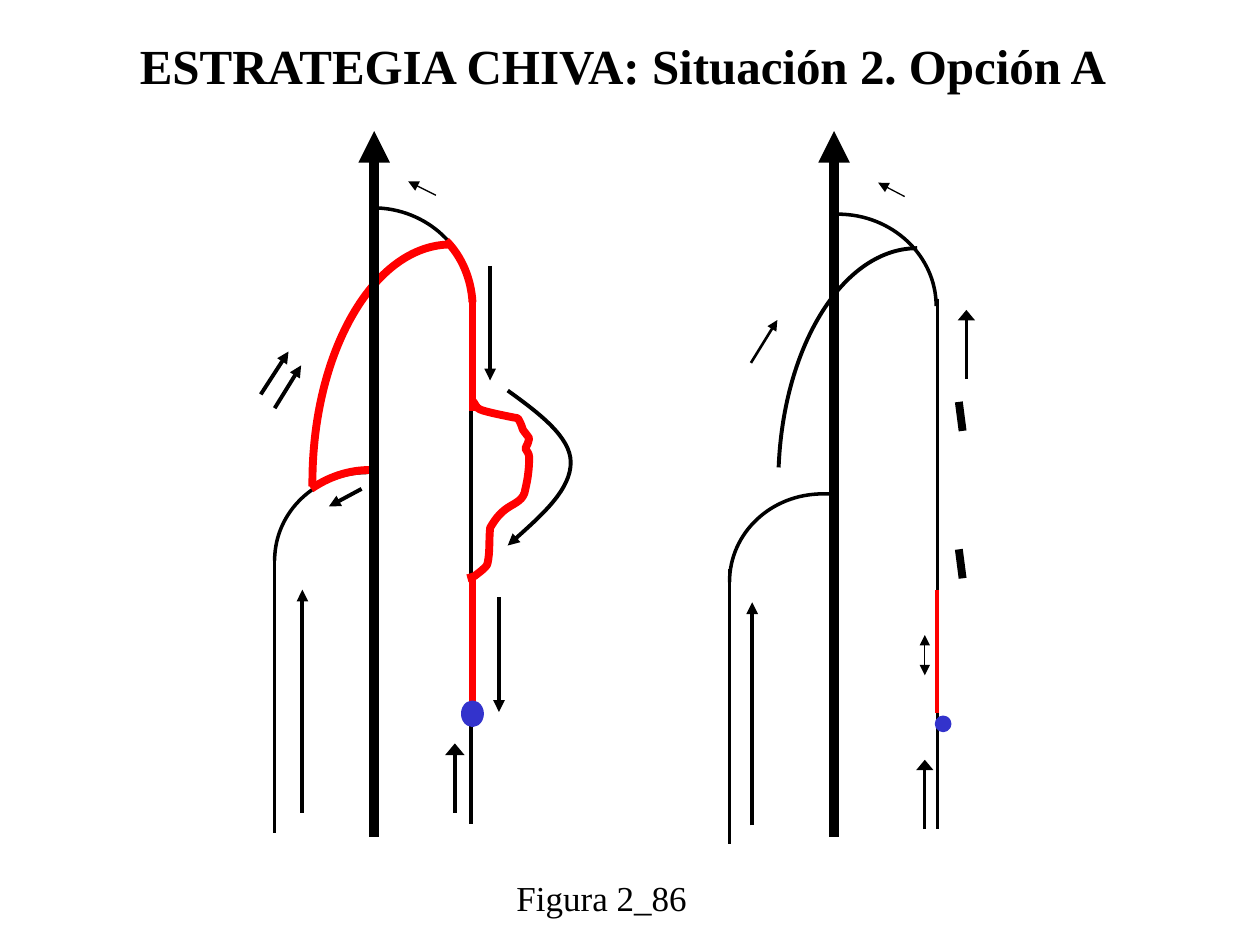
from lxml import etree
from pptx import Presentation
from pptx.dml.color import RGBColor
from pptx.enum.shapes import MSO_CONNECTOR, MSO_SHAPE
from pptx.enum.text import MSO_ANCHOR, PP_ALIGN
from pptx.oxml.ns import qn
from pptx.util import Inches, Pt

COLORS = {"ink": "000000", "reflux": "FF0000", "reentry": "3333CC"}
FONT = "Times New Roman"


def color(name):
    return RGBColor.from_string(COLORS[name])


def format_line(part, name, width, ends=(), head_width="med"):
    part.line.color.rgb = color(name)
    part.line.width = Pt(width)
    for end in ends:
        arrowhead = etree.SubElement(part.line._get_or_add_ln(), qn(f"a:{end}"))
        arrowhead.set("type", "triangle")
        arrowhead.set("w", head_width)


def vessel(slide, box, start, end, width=2, name="ink", ends=(), head_width="med"):
    left, top = box
    points = [Inches(value) for x, y in (start, end) for value in (left + x, top + y)]
    segment = slide.shapes.add_connector(MSO_CONNECTOR.STRAIGHT, *points)
    format_line(segment, name, width, ends, head_width)
    etree.SubElement(segment._element.spPr, qn("a:effectLst"))


def arrow(slide, box, start, end, width=2.25, head_width="med"):
    vessel(slide, box, start, end, width, ends=("tailEnd",), head_width=head_width)


def curve(slide, box, points, width=2, name="ink", ends=()):
    left, top = box
    start, *controls = [(Inches(left + x), Inches(top + y)) for x, y in points]
    builder = slide.shapes.build_freeform(*start)
    builder.add_line_segments(controls, close=False)
    bend = builder.convert_to_shape()
    bend.shadow.inherit = False
    bend.fill.background()
    format_line(bend, name, width, ends)
    outline = bend._element.xpath(".//a:path")[0]
    segments = outline.findall(qn("a:lnTo"))
    for first in range(0, len(segments), 3):
        bezier = etree.SubElement(outline, qn("a:cubicBezTo"))
        for segment in segments[first:first + 3]:
            bezier.append(segment[0])
            outline.remove(segment)


def reentry_point(slide, box, x, y, width, height):
    left, top = box
    dot = slide.shapes.add_shape(
        MSO_SHAPE.OVAL, Inches(left + x), Inches(top + y), Inches(width), Inches(height))
    dot.shadow.inherit = False
    dot.fill.solid()
    dot.fill.fore_color.rgb = color("reentry")
    format_line(dot, "reentry", 3)


def deep_vein(slide, box):
    arrow(slide, box, (0, 5.6), (0, 0), 6)


def before_treatment(slide, box):
    curve(slide, box, [(-0.79, 3.41), (-0.79, 3.02), (-0.46, 2.71), (-0.05, 2.71)])
    vessel(slide, box, (-0.79, 3.39), (-0.79, 5.57))
    curve(slide, box, [(-0.01, 0.61), (0.42, 0.61), (0.77, 0.94), (0.77, 1.34)])
    vessel(slide, box, (0.77, 1.29), (0.77, 5.5))

    varicose_loop = [
        (0.78, 2.14), (0.8, 2.16), (0.81, 2.2), (0.84, 2.21), (0.88, 2.23), (1.09, 2.27),
        (1.14, 2.28), (1.16, 2.31), (1.17, 2.34), (1.18, 2.37), (1.2, 2.4), (1.22, 2.42),
        (1.23, 2.44), (1.23, 2.47), (1.21, 2.49), (1.2, 2.52), (1.21, 2.54), (1.23, 2.56),
        (1.23, 2.59), (1.23, 2.67), (1.22, 2.76), (1.2, 2.84), (1.19, 2.93), (1.12, 2.95),
        (1.06, 2.99), (1, 3.03), (0.96, 3.08), (0.92, 3.15), (0.91, 3.25), (0.92, 3.34),
        (0.9, 3.43), (0.9, 3.46), (0.81, 3.52), (0.8, 3.53), (0.78, 3.54), (0.74, 3.55),
        (0.74, 3.55),
    ]
    reflux_curves = [
        [(-0.49, 2.82), (-0.49, 2.81), (-0.49, 2.8), (-0.49, 2.79),
         (-0.49, 1.75), (0, 0.9), (0.61, 0.9)],
        [(0.57, 0.87), (0.7, 1), (0.77, 1.18), (0.78, 1.36)],
        [(-0.5, 2.84), (-0.37, 2.75), (-0.21, 2.69), (-0.03, 2.69)],
        varicose_loop,
    ]
    for points in reflux_curves:
        curve(slide, box, points, 4.5, "reflux")
    for top, bottom in [(1.32, 2.22), (3.54, 4.53)]:
        vessel(slide, box, (0.78, top), (0.78, bottom), 4.5, "reflux")

    deep_vein(slide, box)
    reentry_point(slide, box, 0.71, 4.54, 0.14, 0.17)
    flows = [
        ((0.92, 1.07), (0.92, 1.98)), ((0.99, 3.7), (0.99, 4.61)),
        ((-0.57, 5.41), (-0.57, 3.64)), ((-0.9, 2.09), (-0.68, 1.75)),
        ((-0.79, 2.2), (-0.58, 1.86)), ((-0.1, 2.84), (-0.36, 2.98)),
    ]
    for start, end in flows:
        arrow(slide, box, start, end)
    arrow(slide, box, (0.64, 5.41), (0.64, 4.86), head_width="lg")
    arrow(slide, box, (0.49, 0.51), (0.27, 0.4), 0.75)
    curve(slide, box, [(1.06, 2.06), (1.31, 2.24), (1.56, 2.43), (1.56, 2.63),
                       (1.56, 2.84), (1.31, 3.07), (1.06, 3.29)], 2.25, ends=("tailEnd",))


def after_treatment(slide, box):
    curve(slide, box, [(-0.83, 3.58), (-0.83, 3.19), (-0.5, 2.88), (-0.09, 2.88),
                       (-0.07, 2.88), (-0.05, 2.88), (-0.03, 2.88)])
    vessel(slide, box, (-0.83, 3.48), (-0.83, 5.66))
    curve(slide, box, [(0.03, 0.66), (0.46, 0.66), (0.81, 0.99), (0.81, 1.39)])
    vessel(slide, box, (0.82, 1.33), (0.82, 5.54))
    curve(slide, box, [(-0.44, 2.67), (-0.4, 1.69), (0.08, 0.93), (0.66, 0.93)], 2.25)

    deep_vein(slide, box)
    reentry_point(slide, box, 0.82, 4.66, 0.09, 0.09)
    vessel(slide, box, (0.82, 3.64), (0.82, 4.62), 2.25, "reflux")
    arrow(slide, box, (-0.65, 5.51), (-0.65, 3.74))
    arrow(slide, box, (-0.66, 1.84), (-0.45, 1.5), 1.5)
    arrow(slide, box, (0.56, 0.52), (0.35, 0.41), 0.75)
    for x, bottom in [(0.72, 5.54), (1.05, 1.97)]:
        arrow(slide, box, (x, bottom), (x, bottom - 0.55), 1.5, "lg")
    vessel(slide, box, (0.72, 4), (0.72, 4.32), 0.75, ends=("headEnd", "tailEnd"))
    for top in (2.15, 3.32):
        vessel(slide, box, (0.99, top), (1.02, top + 0.23), 4.5)


def write(holder, box, text, size, bold=False):
    for side, value in zip(("left", "top", "width", "height"), box):
        setattr(holder, side, Inches(value))
    frame = holder.text_frame
    frame.text = text
    frame.word_wrap = False
    frame.vertical_anchor = MSO_ANCHOR.TOP
    line = frame.paragraphs[0]
    line.alignment = PP_ALIGN.LEFT
    line.space_before = Pt(0)
    line.font.color.rgb = color("ink")
    for attribute, value in {"name": FONT, "size": Pt(size), "bold": bold}.items():
        setattr(line.font, attribute, value)


def main():
    deck = Presentation()
    deck.slide_width, deck.slide_height = Inches(10), Inches(7.5)
    slide = deck.slides.add_slide(deck.slide_layouts[5])
    write(slide.shapes.title, (1.01, 0.23, 8, 0.57),
          "ESTRATEGIA CHIVA: Situación 2. Opción A", 28, True)
    after_treatment(slide, (6.62, 1.04))
    before_treatment(slide, (2.97, 1.04))
    caption = slide.shapes.add_textbox(0, 0, 0, 0)
    write(caption, (4, 6.91, 1.55, 0.43), "Figura 2_86", 20)
    deck.save("out.pptx")


if __name__ == "__main__":
    main()
